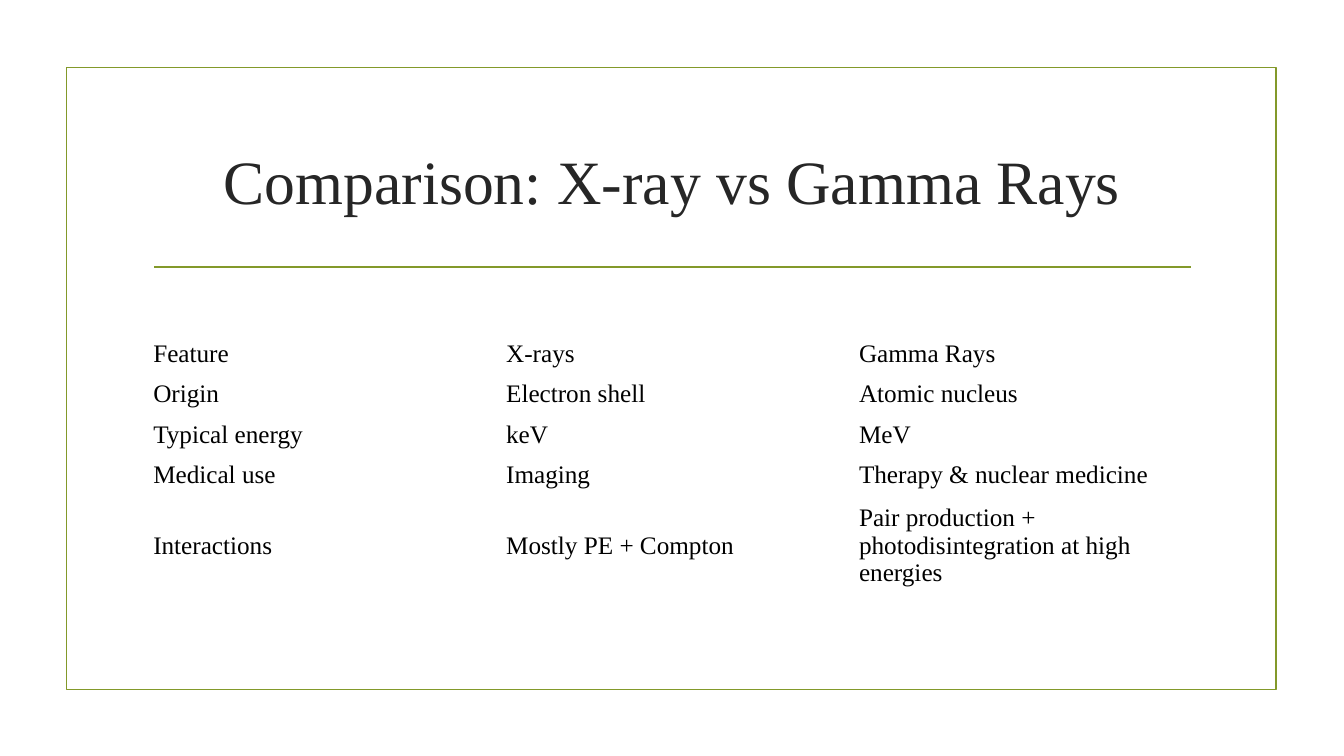
from dataclasses import dataclass

from lxml import etree
from pptx import Presentation
from pptx import util as u
from pptx.dml.color import RGBColor
from pptx.enum import shapes, text
from pptx.oxml import ns


@dataclass(frozen=True)
class Theme:
    """Colours, font and sizes of the slide."""
    background: str = "FFFFFF"
    accent: str = "83992A"
    title: str = "262626"
    body: str = "000000"
    font: str = "Times New Roman"
    title_size: float = 44
    body_size: float = 18
    line_width: float = 1.25


THEME = Theme()
TITLE = "Comparison: X-ray vs Gamma Rays"
ROWS = [
    ("Feature", "X-rays", "Gamma Rays"),
    ("Origin", "Electron shell", "Atomic nucleus"),
    ("Typical energy", "keV", "MeV"),
    ("Medical use", "Imaging", "Therapy & nuclear medicine"),
    ("Interactions", "Mostly PE + Compton",
     "Pair production + photodisintegration at high energies"),
]


def write_text(frame, words, *, size, color, align=text.PP_ALIGN.LEFT):
    """Write one formatted paragraph into a text frame."""
    frame.word_wrap = True
    paragraph = frame.paragraphs[0]
    paragraph.alignment = align
    run = paragraph.add_run()
    run.text = words
    run.font.name = THEME.font
    run.font.size = u.Pt(size)
    run.font.color.rgb = RGBColor.from_string(color)


def style_line(line):
    """Give a line the accent colour and width."""
    line.color.rgb = RGBColor.from_string(THEME.accent)
    line.width = u.Pt(THEME.line_width)


def add_frame(slide, left, top, width, height):
    """Draw the border around the slide content."""
    border = slide.shapes.add_shape(
        shapes.MSO_SHAPE.RECTANGLE, u.Inches(left), u.Inches(top),
        u.Inches(width), u.Inches(height))
    border.shadow.inherit = False
    border.fill.background()
    style_line(border.line)


def add_title(slide, left, top, width, height):
    """Place the title in its box and the rule beneath it."""
    inset, gap = 0.11, 0.15
    rule_top = u.Inches(top + height + gap)
    rule = slide.shapes.add_connector(
        shapes.MSO_CONNECTOR.STRAIGHT, u.Inches(left + inset), rule_top,
        u.Inches(left + width - inset), rule_top)
    style_line(rule.line)
    etree.SubElement(rule._element.spPr, ns.qn("a:effectLst"))

    box = slide.shapes.add_textbox(
        u.Inches(left), u.Inches(top), u.Inches(width), u.Inches(height))
    box.text_frame.vertical_anchor = text.MSO_ANCHOR.MIDDLE
    write_text(box.text_frame, TITLE, size=THEME.title_size,
               color=THEME.title, align=text.PP_ALIGN.CENTER)


def add_comparison(slide, left, top, width, height):
    """Fill the box with the comparison table, its last row the tallest."""
    row_height = 0.377
    columns = len(ROWS[0])
    table = slide.shapes.add_table(
        len(ROWS), columns, u.Inches(left), u.Inches(top),
        u.Inches(width), u.Inches(height)).table
    table.first_row = False
    table.horz_banding = False
    for column in table.columns:
        column.width = u.Inches(width / columns)
    for row, words in zip(table.rows, ROWS):
        row.height = u.Inches(row_height)
        for cell, content in zip(row.cells, words):
            cell.fill.background()
            cell.vertical_anchor = text.MSO_ANCHOR.MIDDLE
            write_text(cell.text_frame, content, size=THEME.body_size,
                       color=THEME.body)
    table.rows[len(ROWS) - 1].height = u.Inches(
        height - row_height * (len(ROWS) - 1))


def main():
    """Build the slide and save it."""
    presentation = Presentation()
    presentation.slide_width = u.Inches(13.33)
    presentation.slide_height = u.Inches(7.5)
    slide = presentation.slides.add_slide(presentation.slide_layouts[6])
    slide.background.fill.solid()
    slide.background.fill.fore_color.rgb = RGBColor.from_string(
        THEME.background)
    add_frame(slide, 0.66, 0.67, 12, 6.17)
    add_title(slide, 1.42, 1.07, 10.5, 1.43)
    add_comparison(slide, 1.42, 3.31, 10.5, 2.44)
    presentation.save("out.pptx")


if __name__ == "__main__":
    main()
